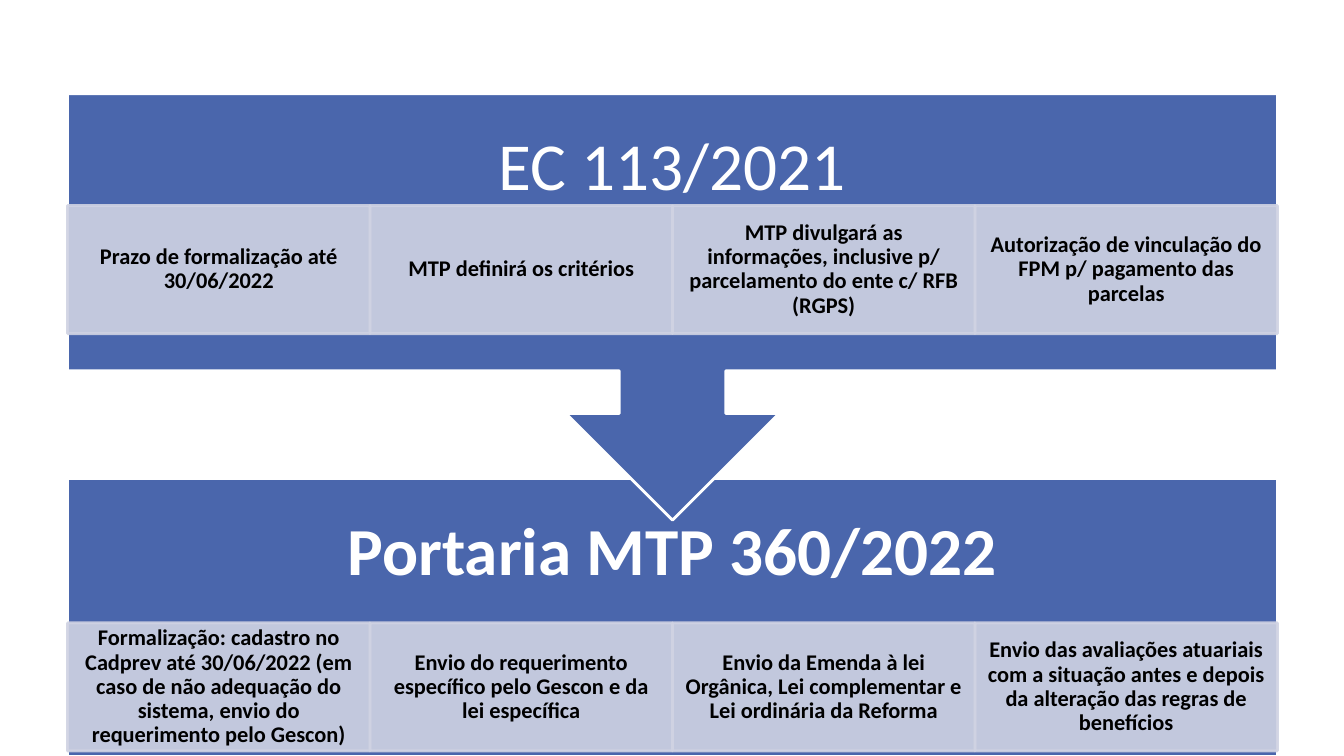
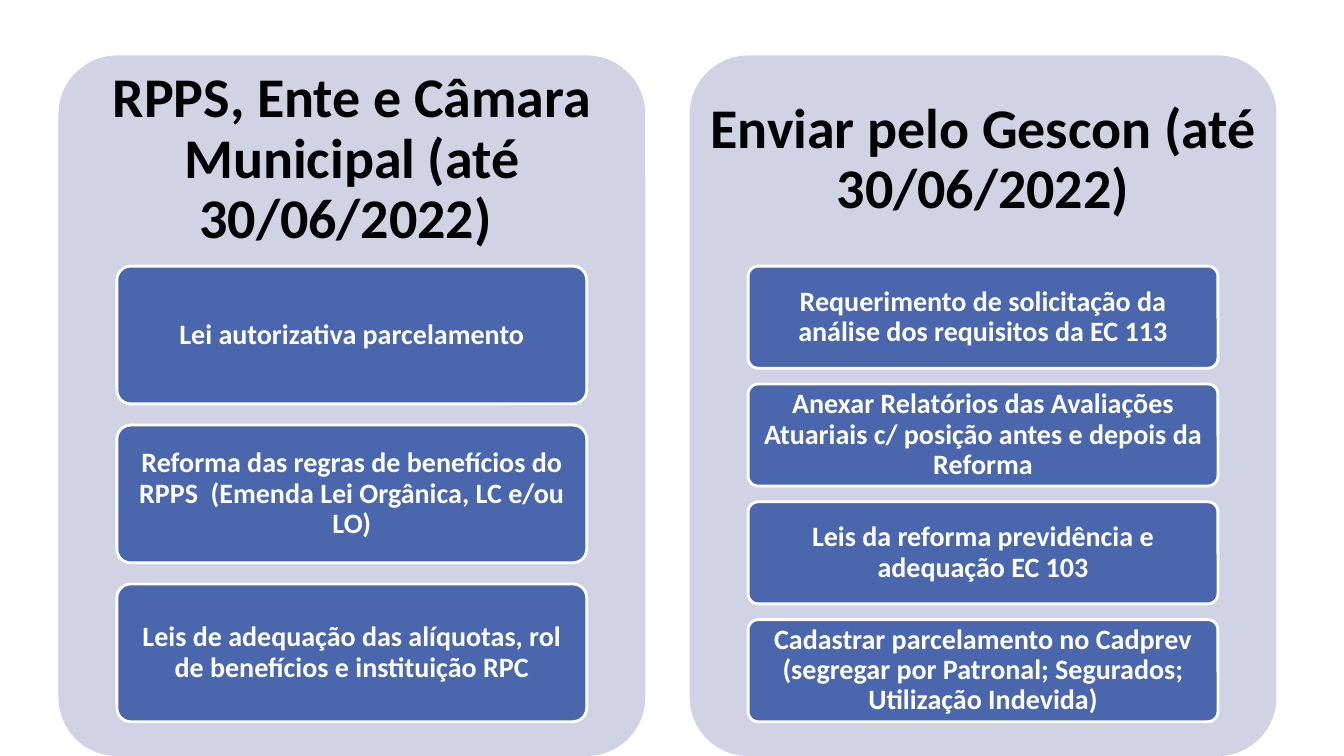
from dataclasses import dataclass

from lxml.etree import SubElement
from pptx import Presentation
from pptx.dml.color import RGBColor
from pptx.enum.shapes import MSO_SHAPE
from pptx.enum.text import MSO_ANCHOR, PP_ALIGN
from pptx.oxml.ns import qn
from pptx.util import Inches, Pt

# Shared style
BLUE, PALE, WHITE, BLACK = "4A66AC", "D0D3E3", "FFFFFF", "000000"
FONT = "Calibri"
LINE_WIDTH = 2
CARD_OPACITY = 90
CORNER = 0.1

# Bands of the first slide
BAND_LEFT, BAND_WIDTH, BAND_TITLE_HEIGHT = 0.67, 12, 1.49
CARD_HEIGHT = 1.27

# Panels of the second slide
PANEL_TOP, PANEL_WIDTH, PANEL_HEIGHT = 0.55, 5.82, 6.95
HEADING_HEIGHT = 2.08
STEPS_TOP, STEPS_HEIGHT = 2.64, 4.52
STEP_WIDTH = 4.66
STEP_GAP_RATIO = 2 / 13


@dataclass(frozen=True)
class Area:
    left: float
    top: float
    width: float
    height: float

    def lengths(self) -> list:
        return [Inches(n) for n in (self.left, self.top, self.width, self.height)]


@dataclass(frozen=True)
class Insets:
    left: float
    top: float
    right: float
    bottom: float


@dataclass(frozen=True)
class TextStyle:
    size: int
    color: str
    bold: bool = True


@dataclass(frozen=True)
class Band:
    title: str
    bold: bool
    top: float
    height: float
    cards_top: float
    shape: MSO_SHAPE
    rotation: int
    cards: tuple


@dataclass(frozen=True)
class Panel:
    left: float
    heading: str
    steps: tuple


TITLE_INSETS = Insets(0.37, 0.37, 0.37, 0.37)
CARD_INSETS = Insets(0.12, 0.02, 0.12, 0.02)
STEP_INSETS = Insets(0.06, 0.04, 0.06, 0.04)
# The rounded corner already insets the heading at the sides and the top
HEADING_INSETS = Insets(0, 0, 0, PANEL_HEIGHT - HEADING_HEIGHT)

# Listed from back to front
BANDS = (
    Band("Portaria MTP 360/2022", True, 4.75, 2.75, 6.18, MSO_SHAPE.RECTANGLE, 0, (
        "Formalização: cadastro no Cadprev até 30/06/2022 (em caso de não "
        "adequação do sistema, envio do requerimento pelo Gescon)",
        "Envio do requerimento específico pelo Gescon e da lei específica",
        "Envio da Emenda à lei Orgânica, Lei complementar e Lei ordinária da Reforma",
        "Envio das avaliações atuariais com a situação antes e depois da "
        "alteração das regras de benefícios",
    )),
    Band("EC 113/2021", False, 0.93, 4.23, 2.04, MSO_SHAPE.UP_ARROW_CALLOUT, 180, (
        "Prazo de formalização até 30/06/2022",
        "MTP definirá os critérios",
        "MTP divulgará as informações, inclusive p/ parcelamento do ente c/ RFB (RGPS)",
        "Autorização de vinculação do FPM p/ pagamento das parcelas",
    )),
)

PANELS = (
    Panel(0.58, "RPPS, Ente e Câmara Municipal (até 30/06/2022) ", (
        "Lei autorizativa parcelamento",
        "Reforma das regras de benefícios do RPPS  (Emenda Lei Orgânica, LC e/ou LO)",
        "Leis de adequação das alíquotas, rol de benefícios e instituição RPC",
    )),
    Panel(6.84, "Enviar pelo Gescon (até 30/06/2022)", (
        "Requerimento de solicitação da análise dos requisitos da EC 113",
        "Anexar Relatórios das Avaliações Atuariais c/ posição antes e depois da Reforma",
        "Leis da reforma previdência e adequação EC 103",
        "Cadastrar parcelamento no Cadprev (segregar por Patronal; Segurados; "
        "Utilização Indevida)",
    )),
)


def set_all(target, values: dict) -> None:
    for name, value in values.items():
        setattr(target, name, value)


def paint(fill, color: str, opacity: int = 100) -> None:
    fill.solid()
    fill.fore_color.rgb = RGBColor.from_string(color)
    if opacity < 100:
        # Transparency is not in the public interface
        for tint in fill._xPr.iter(qn("a:srgbClr")):
            if tint.getparent().getparent() is fill._xPr:
                SubElement(tint, qn("a:alpha"), val=str(opacity * 1000))


def write(shape, text: str, style: TextStyle, insets: Insets) -> None:
    frame = shape.text_frame
    set_all(frame, {
        "word_wrap": True,
        "vertical_anchor": MSO_ANCHOR.MIDDLE,
        "margin_left": Inches(insets.left),
        "margin_top": Inches(insets.top),
        "margin_right": Inches(insets.right),
        "margin_bottom": Inches(insets.bottom),
    })
    para = frame.paragraphs[0]
    set_all(para, {"alignment": PP_ALIGN.CENTER, "line_spacing": 0.9})
    span = para.add_run()
    span.text = text
    set_all(span.font, {"name": FONT, "size": Pt(style.size), "bold": style.bold})
    span.font.color.rgb = RGBColor.from_string(style.color)


def add_block(page, kind: MSO_SHAPE, area: Area, fill: str,
              line: str | None = None, opacity: int = 100):
    block = page.shapes.add_shape(kind, *area.lengths())
    block.shadow.inherit = False
    paint(block.fill, fill, opacity)
    if line is None:
        block.line.fill.background()
    else:
        paint(block.line.fill, line, opacity)
        block.line.width = Pt(LINE_WIDTH)
    if kind == MSO_SHAPE.ROUNDED_RECTANGLE:
        block.adjustments[0] = CORNER
    return block


def draw_band(page, band: Band) -> None:
    area = Area(BAND_LEFT, band.top, BAND_WIDTH, band.height)
    block = add_block(page, band.shape, area, BLUE, WHITE)
    block.rotation = band.rotation

    # Title stays upright over a turned shape
    title_area = Area(BAND_LEFT, band.top, BAND_WIDTH, BAND_TITLE_HEIGHT)
    title = page.shapes.add_textbox(*title_area.lengths())
    write(title, band.title, TextStyle(48, WHITE, band.bold), TITLE_INSETS)

    # Row of equal cards
    width = BAND_WIDTH / len(band.cards)
    for index, text in enumerate(band.cards):
        area = Area(BAND_LEFT + index * width, band.cards_top, width, CARD_HEIGHT)
        card = add_block(page, MSO_SHAPE.RECTANGLE, area, PALE, PALE, CARD_OPACITY)
        write(card, text, TextStyle(16, BLACK), CARD_INSETS)


def draw_panel(page, panel: Panel) -> None:
    area = Area(panel.left, PANEL_TOP, PANEL_WIDTH, PANEL_HEIGHT)
    block = add_block(page, MSO_SHAPE.ROUNDED_RECTANGLE, area, PALE)
    write(block, panel.heading, TextStyle(40, BLACK), HEADING_INSETS)

    # Steps share the same total height
    count = len(panel.steps)
    height = STEPS_HEIGHT / (count + (count - 1) * STEP_GAP_RATIO)
    pitch = height * (1 + STEP_GAP_RATIO)
    left = panel.left + (PANEL_WIDTH - STEP_WIDTH) / 2
    for index, text in enumerate(panel.steps):
        area = Area(left, STEPS_TOP + index * pitch, STEP_WIDTH, height)
        step = add_block(page, MSO_SHAPE.ROUNDED_RECTANGLE, area, BLUE, WHITE)
        write(step, text, TextStyle(20, WHITE), STEP_INSETS)


def main() -> None:
    deck = Presentation()
    set_all(deck, {"slide_width": Inches(13.33), "slide_height": Inches(7.5)})
    blank = deck.slide_layouts[6]

    # Legal acts
    page = deck.slides.add_slide(blank)
    for band in BANDS:
        draw_band(page, band)

    # Tasks and deadlines
    page = deck.slides.add_slide(blank)
    for panel in PANELS:
        draw_panel(page, panel)

    deck.save("out.pptx")


if __name__ == "__main__":
    main()
